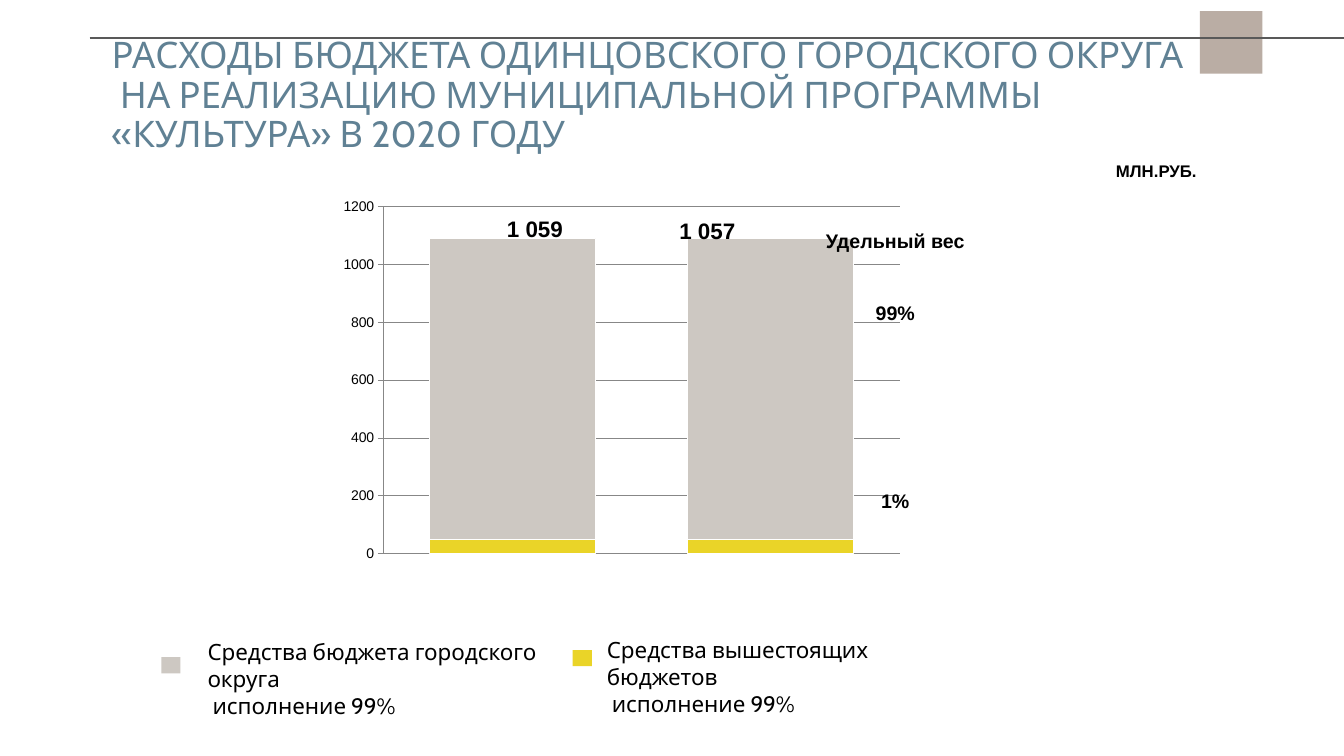
from lxml import etree
from pptx import Presentation
from pptx.chart.data import CategoryChartData
from pptx.dml.color import RGBColor
from pptx.enum.chart import XL_CHART_TYPE, XL_TICK_MARK
from pptx.enum.shapes import MSO_CONNECTOR, MSO_SHAPE
from pptx.enum.text import MSO_ANCHOR, PP_ALIGN
from pptx.oxml import parse_xml
from pptx.oxml.ns import nsdecls, qn
from pptx.util import Inches, Pt

STACKED = XL_CHART_TYPE.COLUMN_STACKED
TICK_OUTSIDE, TICK_NONE = XL_TICK_MARK.OUTSIDE, XL_TICK_MARK.NONE
STRAIGHT, RECTANGLE = MSO_CONNECTOR.STRAIGHT, MSO_SHAPE.RECTANGLE
TOP, MIDDLE = MSO_ANCHOR.TOP, MSO_ANCHOR.MIDDLE
LEFT, CENTER = PP_ALIGN.LEFT, PP_ALIGN.CENTER

COLORS = {
    "title": "608194",
    "text": "000000",
    "city": "CDC8C2",
    "higher": "EAD428",
    "accent": "BAADA4",
    "rule": "595959",
    "grid": "878787",
    "white": "FFFFFF",
}


def rgb(name):
    return RGBColor.from_string(COLORS[name])


class BudgetSlide:
    """Holds the style and the slide being built."""

    body_font, heading_font, chart_font = "Arial", "Cabin", "Calibri"

    def __init__(self, presentation):
        self.slide = presentation.slides.add_slide(presentation.slide_layouts[6])
        self.shapes = self.slide.shapes

    def style(self, font, name, size, color="text", bold=False):
        font.name, font.size, font.bold = name, Pt(size), bold
        font.color.rgb = rgb(color)

    def text(self, box, lines, size, font=body_font, color="text", bold=True,
             wrap=False, align=LEFT, anchor=TOP, line_spacing=None,
             gaps=None, top_inset=0.05):
        frame = self.shapes.add_textbox(*map(Inches, box)).text_frame
        frame.word_wrap = wrap
        frame.vertical_anchor = anchor
        frame.margin_top = Inches(top_inset)
        for index, line in enumerate(lines):
            paragraph = frame.paragraphs[0] if index == 0 else frame.add_paragraph()
            paragraph.text = line
            paragraph.alignment = align
            paragraph.line_spacing = line_spacing
            if gaps:
                paragraph.space_before = Pt(gaps[index])
            self.style(paragraph.font, font, size, color, bold)

    def block(self, box, color):
        shape = self.shapes.add_shape(RECTANGLE, *map(Inches, box))
        shape.shadow.inherit = False
        shape.fill.solid()
        shape.fill.fore_color.rgb = rgb(color)
        shape.line.fill.background()

    def rule(self, start, end, color, width):
        line = self.shapes.add_connector(STRAIGHT, *map(Inches, start + end))
        line.line.color.rgb = rgb(color)
        line.line.width = Pt(width)
        etree.SubElement(line._element.spPr, qn("a:effectLst"))

    def stacked_chart(self, box, categories, series, plot_area):
        data = CategoryChartData()
        data.categories = categories
        for name, values, _ in series:
            data.add_series(name, values)
        chart = self.shapes.add_chart(STACKED, *map(Inches, box), data).chart
        chart.has_legend = chart.has_title = False
        self.style(chart.font, self.chart_font, 18)

        plot = chart.plots[0]
        plot.gap_width, plot.overlap = 55, 100
        plot.vary_by_categories = False
        for bars, (_, _, color) in zip(plot.series, series):
            bars.format.fill.solid()
            bars.format.fill.fore_color.rgb = rgb(color)
            bars.format.line.color.rgb = rgb("white")
            bars.format.line.width = Pt(0.75)

        chart.category_axis.visible = False
        axis = chart.value_axis
        axis.minimum_scale, axis.maximum_scale, axis.major_unit = 0, 1200, 200
        axis.major_tick_mark, axis.minor_tick_mark = TICK_OUTSIDE, TICK_NONE
        axis.has_major_gridlines = True
        for line in (axis.format.line, axis.major_gridlines.format.line):
            line.color.rgb = rgb("grid")
            line.width = Pt(0.75)
        self.style(axis.tick_labels.font, self.body_font, 10)

        # Fixed inner plot area
        parts = "".join(f'<c:{tag}Mode val="edge"/>' for tag in "xy")
        parts += "".join(f'<c:{tag} val="{share}"/>' for tag, share in zip("xywh", plot_area))
        layout = parse_xml(
            f'<c:layout {nsdecls("c")}><c:manualLayout>'
            f'<c:layoutTarget val="inner"/>{parts}</c:manualLayout></c:layout>')
        area = chart._chartSpace.chart.plotArea
        for old in area.findall(qn("c:layout")):
            area.remove(old)
        area.insert(0, layout)


def main():
    presentation = Presentation()
    presentation.slide_width, presentation.slide_height = Inches(13.33), Inches(7.5)
    page = BudgetSlide(presentation)

    # Title
    page.text((1.01, 0.54, 11.56, 0.83),
              ["РАСХОДЫ БЮДЖЕТА ОДИНЦОВСКОГО ГОРОДСКОГО ОКРУГА\v"
               " НА РЕАЛИЗАЦИЮ МУНИЦИПАЛЬНОЙ ПРОГРАММЫ «КУЛЬТУРА» В 2020 ГОДУ"],
              26.1, page.heading_font, "title", bold=False, wrap=True,
              anchor=MIDDLE, line_spacing=0.9)

    # Chart of spending by source of funds
    page.stacked_chart((1.12, 1.78, 8.67, 3.87), ["1", "2"],
                       [("Series 1", (50, 50), "higher"),
                        ("Series 2", (1040, 1040), "city")],
                       (0.31, 0.07, 0.59, 0.89))

    # Totals above the columns
    for total, left, top in (("1 059", 4.93, 2.09), ("1 057", 6.64, 2.11)):
        page.text((left, top, 0.94, 0.24), [total], 16)

    # Shares and unit
    page.text((8.03, 1.99, 1.7, 3.17), ["Удельный вес", "99%", "1%"], 14,
              align=CENTER, gaps=(0, 34.5, 118), top_inset=0.28)
    page.text((10.97, 1.55, 1.01, 0.3), ["МЛН.РУБ."], 12)

    # Legend
    for source, color, label_box, key_corner in (
            ("Средства вышестоящих бюджетов", "higher", (5.92, 6.26, 3.31, 0.64), (5.68, 6.45)),
            ("Средства бюджета городского округа", "city", (1.96, 6.28, 3.49, 0.64), (1.6, 6.52))):
        page.text(label_box, [source, " исполнение 99%"], 16, page.heading_font,
                  bold=False, wrap=True)
        page.block(key_corner + (0.19, 0.16), color)

    # Header decoration
    page.block((11.9, 0.11, 0.62, 0.62), "accent")
    page.rule((0.89, 0.38), (13.33, 0.38), "rule", 1.5)

    presentation.save("out.pptx")


if __name__ == "__main__":
    main()
